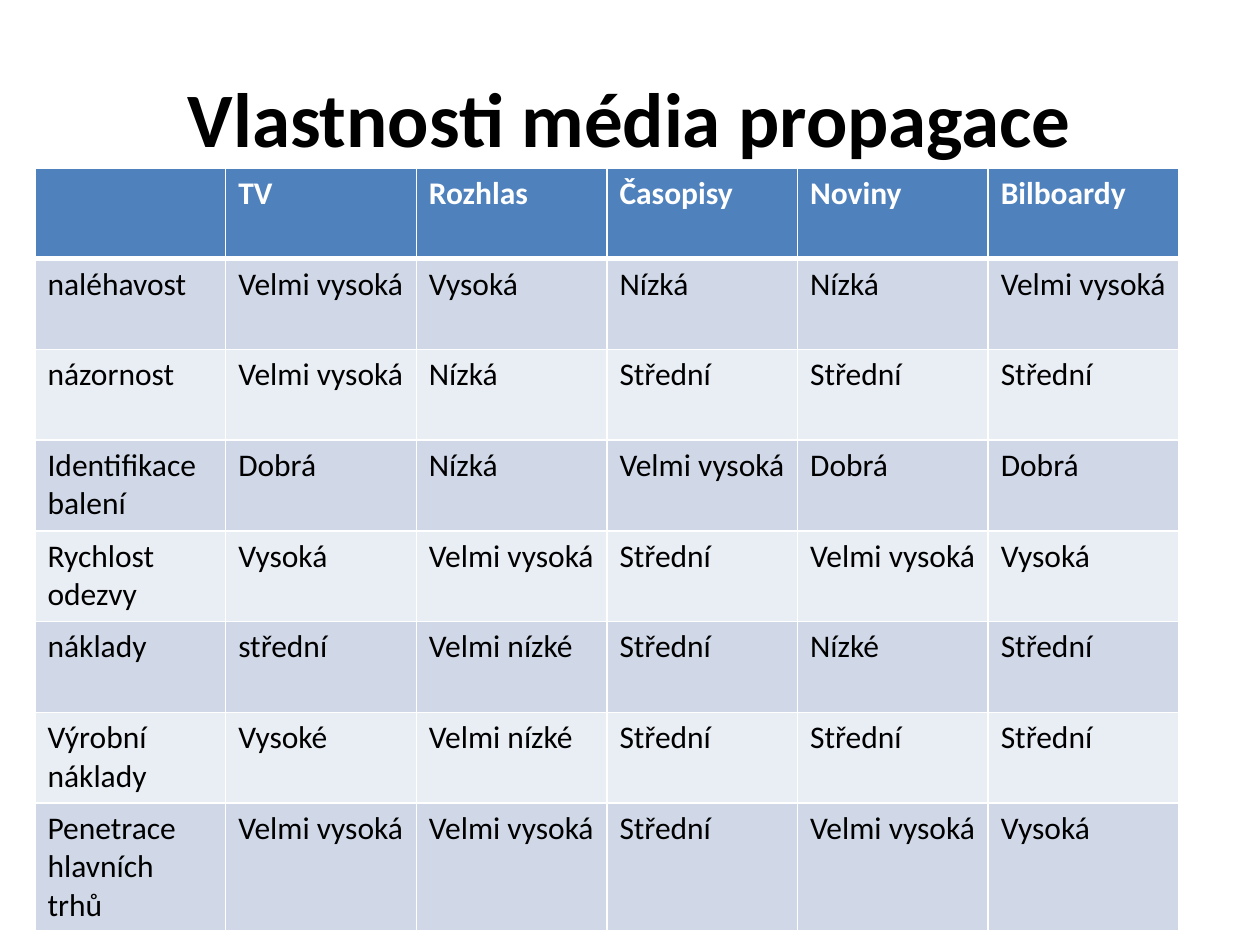
from pptx import Presentation
from pptx.dml.color import RGBColor as Rgb
from pptx.enum.text import MSO_ANCHOR as Anchor, PP_ALIGN as Align
from pptx.oxml.ns import qn
from pptx.util import Pt
from lxml.etree import SubElement as Sub

FONT = "Calibri"
HUES = {"black": "000000", "white": "FFFFFF", "head": "4F81BD",
        "odd": "D0D8E8", "even": "E9EDF4"}
ROWS = [
    ["", "TV", "Rozhlas", "Časopisy", "Noviny", "Bilboardy"],
    ["naléhavost", "Velmi vysoká", "Vysoká", "Nízká", "Nízká", "Velmi vysoká"],
    ["názornost", "Velmi vysoká", "Nízká", "Střední", "Střední", "Střední"],
    ["Identifikace balení", "Dobrá", "Nízká", "Velmi vysoká", "Dobrá", "Dobrá"],
    ["Rychlost odezvy", "Vysoká", "Velmi vysoká", "Střední", "Velmi vysoká", "Vysoká"],
    ["náklady", "střední", "Velmi nízké", "Střední", "Nízké", "Střední"],
    ["Výrobní náklady", "Vysoké", "Velmi nízké", "Střední", "Střední", "Střední"],
    ["Penetrace hlavních trhů", "Velmi vysoká", "Velmi vysoká", "Střední",
     "Velmi vysoká", "Vysoká"],
]
COL_WIDTH, ROW_HEIGHT, LAST_HEIGHT = 108.95, 51.85, 56.2


def add_run(para, text, size, hue, bold):
    run = para.add_run()
    run.text = text
    font = run.font
    font.name, font.size, font.bold = FONT, Pt(size), bold
    font.color.rgb = Rgb.from_string(HUES[hue])


def add_title(slide, text):
    title = slide.shapes.title
    title.left, title.top, title.width, title.height = map(Pt, (36, 21.6, 648, 90))
    frame = title.text_frame
    frame.vertical_anchor = Anchor.MIDDLE
    para = frame.paragraphs[0]
    para.alignment = Align.CENTER
    add_run(para, text, 44, "black", True)


def set_edges(cell, top, bottom):
    props = cell._tc.get_or_add_tcPr()
    for side, width in (("L", 1), ("R", 1), ("T", top), ("B", bottom)):
        line = Sub(props, qn(f"a:ln{side}"), w=str(Pt(width)))
        fill = Sub(line, qn("a:solidFill"))
        Sub(fill, qn("a:srgbClr"), val=HUES["white"])


def fill_cell(cell, text, row):
    head = row == 0
    # Edges go before the fill in the cell properties
    set_edges(cell, 3 if row == 1 else 1, 3 if head else 1)
    cell.fill.solid()
    band = "head" if head else "odd" if row % 2 else "even"
    cell.fill.fore_color.rgb = Rgb.from_string(HUES[band])
    if text:
        add_run(cell.text_frame.paragraphs[0], text, 18,
                "white" if head else "black", head)


def add_grid(slide, rows):
    count, width = len(rows), len(rows[0])
    height = ROW_HEIGHT * (count - 1) + LAST_HEIGHT
    table = slide.shapes.add_table(count, width, Pt(20), Pt(96),
                                   Pt(COL_WIDTH * width), Pt(height)).table
    for col in table.columns:
        col.width = Pt(COL_WIDTH)
    for i, texts in enumerate(rows):
        table.rows[i].height = Pt(LAST_HEIGHT if i == count - 1 else ROW_HEIGHT)
        for j, text in enumerate(texts):
            fill_cell(table.cell(i, j), text, i)


def main():
    deck = Presentation()
    deck.slide_width, deck.slide_height = Pt(720), Pt(540)
    slide = deck.slides.add_slide(deck.slide_layouts[5])
    # Heading, then the media comparison
    add_title(slide, "Vlastnosti média propagace")
    add_grid(slide, ROWS)
    deck.save("out.pptx")


if __name__ == "__main__":
    main()
